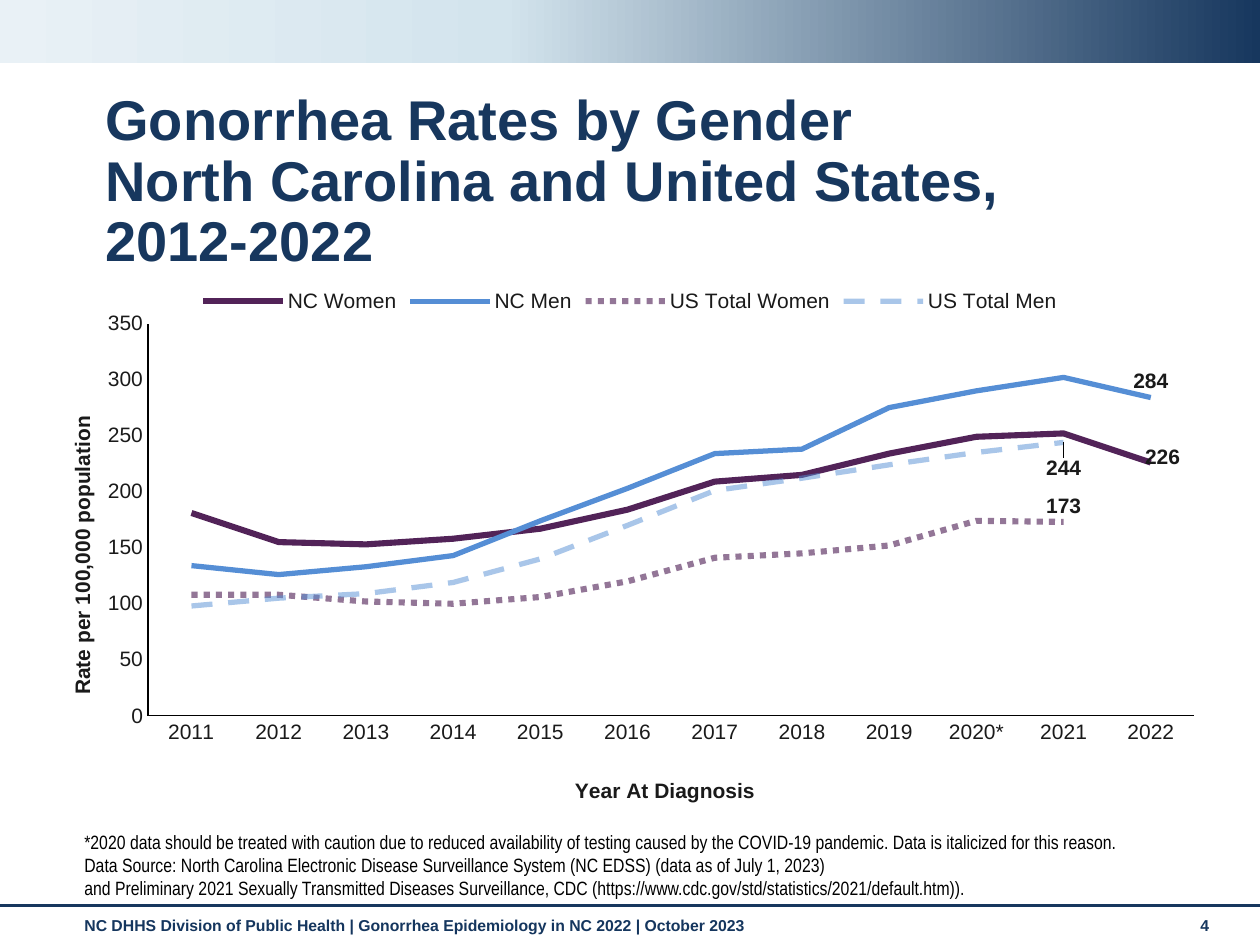
from copy import deepcopy

from lxml import etree
from pptx import Presentation
from pptx.chart.data import CategoryChartData
from pptx.dml.color import RGBColor
from pptx.enum.chart import XL_CHART_TYPE as ChartType
from pptx.enum.chart import XL_LABEL_POSITION as LabelPosition
from pptx.enum.chart import XL_LEGEND_POSITION as LegendPosition
from pptx.enum.chart import XL_TICK_MARK as TickMark
from pptx.enum.dml import MSO_LINE as Dash
from pptx.enum.shapes import MSO_CONNECTOR as Connector
from pptx.enum.shapes import MSO_SHAPE as Shape
from pptx.enum.text import MSO_ANCHOR as Anchor
from pptx.oxml import parse_xml
from pptx.oxml.ns import nsdecls, qn
from pptx.util import Emu, Pt

NAVY = RGBColor(0x17, 0x37, 0x5E)
FOOTER_NAVY = RGBColor(0x15, 0x36, 0x5E)
PALE_BLUE = RGBColor(0xD3, 0xE4, 0xED)
MIST = RGBColor(0xE9, 0xF1, 0xF6)
PURPLE = RGBColor(0x52, 0x23, 0x58)
BLUE = RGBColor(0x55, 0x8E, 0xD5)
CHARCOAL = RGBColor(0x1A, 0x1A, 0x1A)
BLACK = RGBColor(0, 0, 0)

YEARS = ["2011", "2012", "2013", "2014", "2015", "2016",
         "2017", "2018", "2019", "2020*", "2021", "2022"]
RATES = {
    "NC Women": [181, 155, 153, 158, 167, 184, 209, 215, 234, 249, 252, 226],
    "NC Men": [134, 126, 133, 143, 174, 203, 234, 238, 275, 290, 302, 284],
    "US Total Women": [108, 108, 102, 100, 106, 120, 141, 145, 152, 174, 173, None],
    "US Total Men": [98, 105, 109, 119, 140, 170, 201, 212, 224, 235, 244, None],
}
LINE_STYLES = [
    (PURPLE, 3.5, None, 100),
    (BLUE, 3, None, 100),
    (PURPLE, 3.5, Dash.ROUND_DOT, 62),
    (BLUE, 3, Dash.DASH, 50),
]
LABELS = [(11, (0.01, 0.02)), (11, None), (10, None), (10, (0, 0.08))]
NOTES = [
    "*2020 data should be treated with caution due to reduced availability of testing "
    "caused by the COVID-19 pandemic. Data is italicized for this reason.",
    "Data Source: North Carolina Electronic Disease Surveillance System (NC EDSS) "
    "(data as of July 1, 2023)",
    "and Preliminary 2021 Sexually Transmitted Diseases Surveillance, CDC "
    "(https://www.cdc.gov/std/statistics/2021/default.htm)).",
]


def px(length):
    return Emu(round(length * 914400 / 126))


def manual_layout(**values):
    parts = "".join(f'<c:{key} val="{value}"/>' for key, value in values.items())
    return parse_xml(f'<c:layout {nsdecls("c")}><c:manualLayout>{parts}'
                     '</c:manualLayout></c:layout>')


class SlideBuilder:
    font_name = "Arial"

    def __init__(self, presentation):
        self.slide = presentation.slides.add_slide(presentation.slide_layouts[6])
        self.shapes = self.slide.shapes

    def style(self, font, size, color, bold=False, name=None):
        font.name = name or self.font_name
        font.size = Pt(size)
        font.bold = bold
        font.color.rgb = color

    def text(self, box, lines, size, color, bold=False, name=None,
             anchor=Anchor.TOP, spacing=1.0):
        frame = self.shapes.add_textbox(*map(px, box)).text_frame
        frame.word_wrap = True
        frame.vertical_anchor = anchor
        frame.text = "\n".join(lines)
        for paragraph in frame.paragraphs:
            paragraph.line_spacing = spacing
            self.style(paragraph.font, size, color, bold, name)

    def gradient_band(self, box, stops):
        shape = self.shapes.add_shape(Shape.RECTANGLE, *map(px, box))
        shape.shadow.inherit = False
        shape.line.fill.background()
        shape.fill.gradient()
        shape.fill.gradient_angle = 180
        stop_list = shape.fill._xPr.find(qn("a:gradFill")).find(qn("a:gsLst"))
        stop_list.append(deepcopy(stop_list[-1]))
        for stop, (position, color) in zip(shape.fill.gradient_stops, stops):
            stop.position = position
            stop.color.rgb = color

    def rule(self, start, end, color, width):
        line = self.shapes.add_connector(Connector.STRAIGHT, *map(px, start + end))
        line.line.color.rgb = color
        line.line.width = Pt(width)
        etree.SubElement(line._element.spPr, qn("a:effectLst"))

    def axis(self, axis, title, x, y):
        axis.has_major_gridlines = False
        axis.major_tick_mark = axis.minor_tick_mark = TickMark.NONE
        axis.format.line.color.rgb = BLACK
        axis.format.line.width = Pt(0.75)
        self.style(axis.tick_labels.font, 12, CHARCOAL)
        frame = axis.axis_title.text_frame
        frame.text = title
        self.style(frame.paragraphs[0].font, 12, CHARCOAL, True)
        element = axis.axis_title._element
        for layout in element.findall(qn("c:layout")):
            element.remove(layout)
        element.find(qn("c:tx")).addnext(
            manual_layout(xMode="edge", yMode="edge", x=x, y=y))

    def series_line(self, series, color, width, dash, opacity):
        series.smooth = False
        line = series.format.line
        line.color.rgb = color
        line.width = Pt(width)
        if dash:
            line.dash_style = dash
        if opacity < 100:
            for fill in series._element.spPr.iter(qn("a:srgbClr")):
                etree.SubElement(fill, qn("a:alpha"), val=str(opacity * 1000))

    def point_label(self, series, index, offset):
        series.data_labels.show_value = False
        label = series.points[index].data_label
        self.style(label.font, 12, CHARCOAL, True)
        label.position = LabelPosition.ABOVE
        if offset:
            for element in series._element.iter(qn("c:dLbl")):
                element.find(qn("c:idx")).addnext(
                    manual_layout(x=offset[0], y=offset[1]))

    def line_chart(self, box, categories, values):
        data = CategoryChartData(number_format="#,##0")
        data.categories = categories
        for name, numbers in values.items():
            data.add_series(name, numbers)
        chart = self.shapes.add_chart(ChartType.LINE, *map(px, box), data).chart
        self.style(chart.font, 12, CHARCOAL)
        chart.has_title = False
        chart.has_legend = True
        chart.legend.position = LegendPosition.TOP
        chart.legend.include_in_layout = False
        self.style(chart.legend.font, 12, CHARCOAL)
        self.axis(chart.category_axis, "Year At Diagnosis", 0.45, 0.94)
        self.axis(chart.value_axis, "Rate per 100,000 population", 0.02, 0.26)
        chart.value_axis.minimum_scale = 0
        chart.value_axis.maximum_scale = 350
        chart.value_axis.major_unit = 50
        plot = chart.plots[0]
        plot.vary_by_categories = False
        for series, line_style, label in zip(plot.series, LINE_STYLES, LABELS):
            self.series_line(series, *line_style)
            self.point_label(series, *label)
        area = chart._chartSpace.chart.plotArea
        for layout in area.findall(qn("c:layout")):
            area.remove(layout)
        area.insert(0, manual_layout(layoutTarget="inner", xMode="edge", yMode="edge",
                                     x=0.09, y=0.09, w=0.89, h=0.74))


def main():
    presentation = Presentation()
    presentation.slide_width = px(1260)
    presentation.slide_height = px(945)
    builder = SlideBuilder(presentation)
    builder.text((72, 910, 1101, 37), ["NC DHHS Division of Public Health | Gonorrhea "
                 "Epidemiology in NC 2022 | October 2023"], 9, FOOTER_NAVY, True)
    builder.text((1188, 910, 55, 37), ["4"], 9, FOOTER_NAVY, True)
    builder.gradient_band((0, 0, 1260, 63), [(0, NAVY), (0.6, PALE_BLUE), (1, MIST)])
    builder.rule((0, 906), (1260, 906), NAVY, 1.75)
    builder.text((93, 86, 1167, 76), ["Gonorrhea Rates by Gender\vNorth Carolina and "
                 "United States, \v2012-2022"], 32, NAVY, True, spacing=0.9)
    builder.line_chart((42, 276, 1176, 533), YEARS, RATES)
    builder.text((72, 861, 1147, 45), NOTES, 11, BLACK, name="Arial Narrow",
                 anchor=Anchor.BOTTOM)
    presentation.save("out.pptx")


if __name__ == "__main__":
    main()
